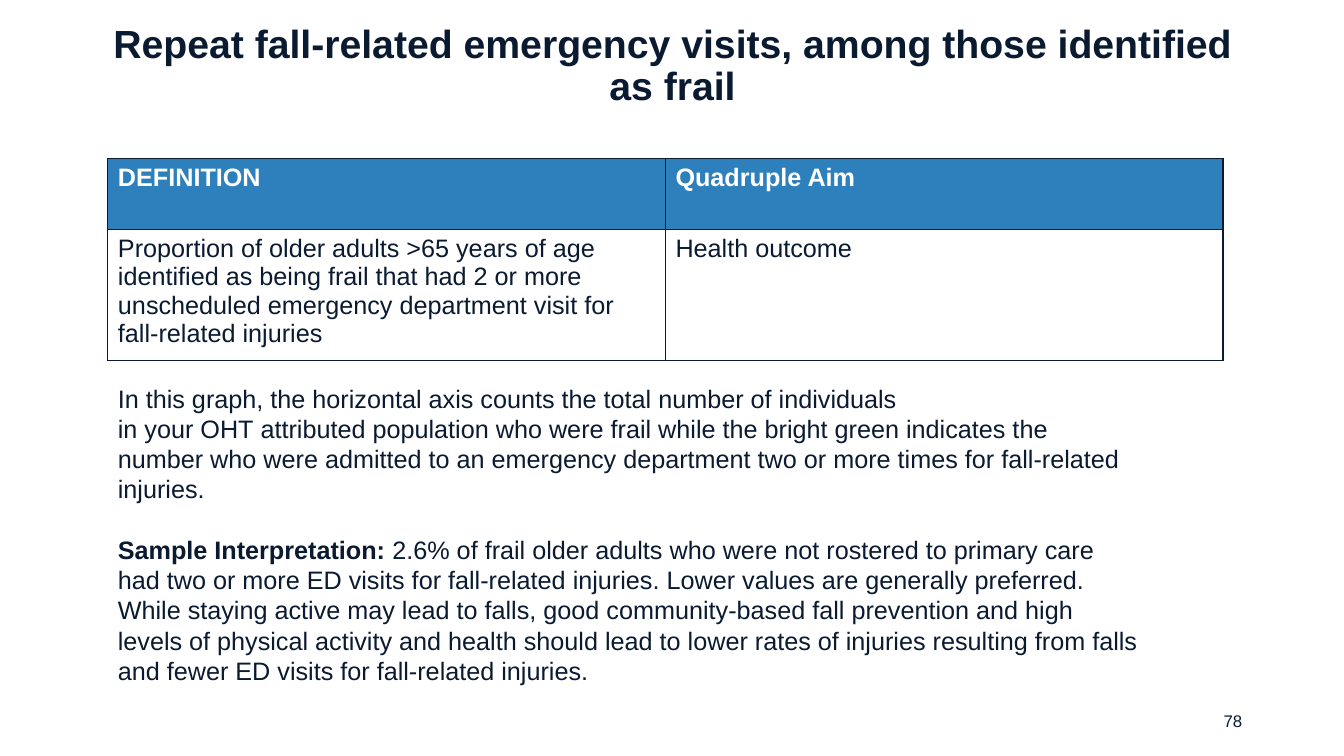
from dataclasses import dataclass

from lxml.etree import SubElement
from pptx import Presentation
from pptx.dml.color import RGBColor as RGB
from pptx.enum.text import MSO_ANCHOR as Anchor, PP_ALIGN as Align
from pptx.oxml.ns import qn
from pptx.util import Inches, Pt


@dataclass(frozen=True)
class Theme:
    face: str = "Arial"
    ink: str = "0A1A31"
    blue: str = "2E80BC"
    white: str = "FFFFFF"
    title: int = 28
    body: int = 18
    small: int = 12
    rule: int = 1


THEME = Theme()
HARD = chr(160)  # no-break space
TITLE = "Repeat fall-related emergency visits, among those identified as frail"
ROWS = [
    ("DEFINITION", "Quadruple Aim"),
    ("Proportion of older adults >65 years of age identified as being frail "
     "that had 2 or more unscheduled emergency department visit for "
     "fall-related injuries", "Health outcome"),
]
GRAPH = (
    "In this graph, the horizontal axis counts the total number of individuals "
    + "in your OHT attributed".replace(" ", HARD) +
    " population who were frail while the bright green indicates the number "
    "who were admitted to an emergency department two or more times for "
    "fall-related injuries."
)
LABEL = "Sample Interpretation: "
SAMPLE = (
    "2.6% of frail older adults who were not rostered to primary care had two "
    "or more ED visits for fall-related injuries. Lower values are generally "
    "preferred. While staying active may lead to falls, good community-based "
    "fall prevention and high levels of physical activity and health should "
    "lead to lower rates of injuries resulting from falls and fewer ED visits "
    "for fall-related injuries."
)


def add_run(para, text, size, color=THEME.ink, bold=False):
    run = para.add_run()
    run.text = text
    look = {"name": THEME.face, "size": Pt(size), "bold": bold}
    for key, value in look.items():
        setattr(run.font, key, value)
    run.font.color.rgb = RGB.from_string(color)


def add_box(slide, box, paras, size, anchor=Anchor.TOP, **form):
    """Add a text box; each paragraph is a list of (text, bold) runs."""
    frame = slide.shapes.add_textbox(*map(Inches, box)).text_frame
    frame.word_wrap = True
    frame.vertical_anchor = anchor
    for i, runs in enumerate(paras):
        para = frame.add_paragraph() if i else frame.paragraphs[0]
        for key, value in form.items():
            setattr(para, key, value)
        for text, bold in runs:
            add_run(para, text, size, bold=bold)
    return frame


def set_edges(cell):
    props = cell._tc.get_or_add_tcPr()
    for i, side in enumerate("LRTB"):
        line = props.makeelement(qn(f"a:ln{side}"), {"w": str(Pt(THEME.rule))})
        fill = SubElement(line, qn("a:solidFill"))
        SubElement(fill, qn("a:srgbClr"), val=THEME.ink)
        props.insert(i, line)


def add_grid(slide, box, heights):
    size = len(ROWS), len(ROWS[0])
    table = slide.shapes.add_table(*size, *map(Inches, box)).table
    for row, height in zip(table.rows, heights):
        row.height = Inches(height)
    for i, texts in enumerate(ROWS):
        head = i == 0
        for j, text in enumerate(texts):
            cell = table.cell(i, j)
            cell.fill.solid()
            cell.fill.fore_color.rgb = RGB.from_string(
                THEME.blue if head else THEME.white)
            add_run(cell.text_frame.paragraphs[0], text, THEME.body,
                    THEME.white if head else THEME.ink, head)
            set_edges(cell)


def main():
    deck = Presentation()
    deck.slide_width, deck.slide_height = Inches(13.33), Inches(7.5)
    slide = deck.slides.add_slide(deck.slide_layouts[6])
    add_box(slide, (0.77, 0.24, 11.8, 0.84), [[(TITLE, True)]], THEME.title,
            Anchor.MIDDLE, alignment=Align.CENTER, line_spacing=0.9)
    add_grid(slide, (1.07, 1.57, 11.06, 2.01), (0.71, 1.3))
    notes = add_box(slide, (1.07, 3.75, 10.32, 3.13),
                    [[(GRAPH, False)], [(LABEL, True), (SAMPLE, False)]],
                    THEME.body)
    notes.paragraphs[1].space_before = Pt(21.6)
    add_box(slide, (9.42, 6.95, 3, 0.4), [[("78", False)]], THEME.small,
            Anchor.MIDDLE, alignment=Align.RIGHT)
    deck.save("out.pptx")


if __name__ == "__main__":
    main()
